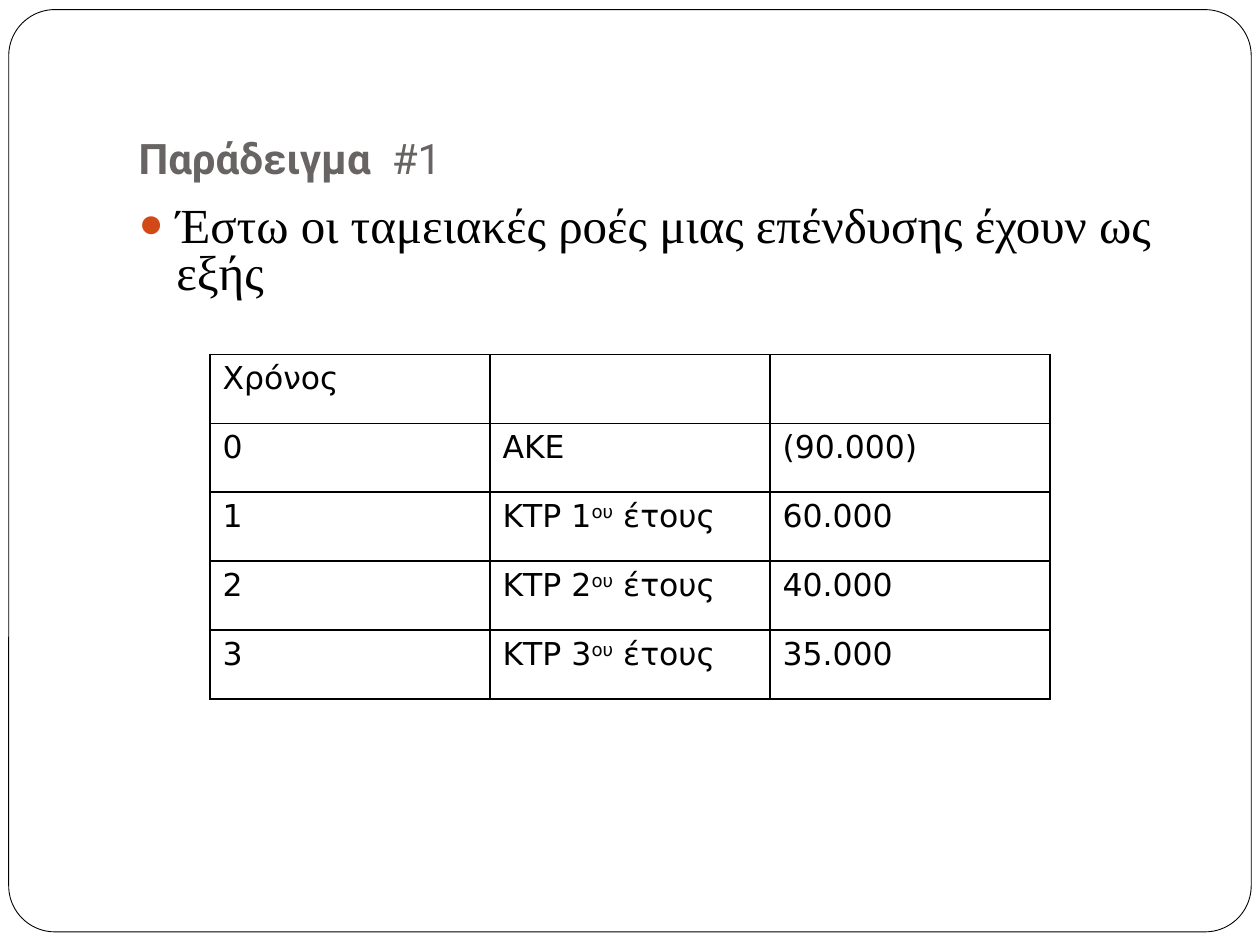
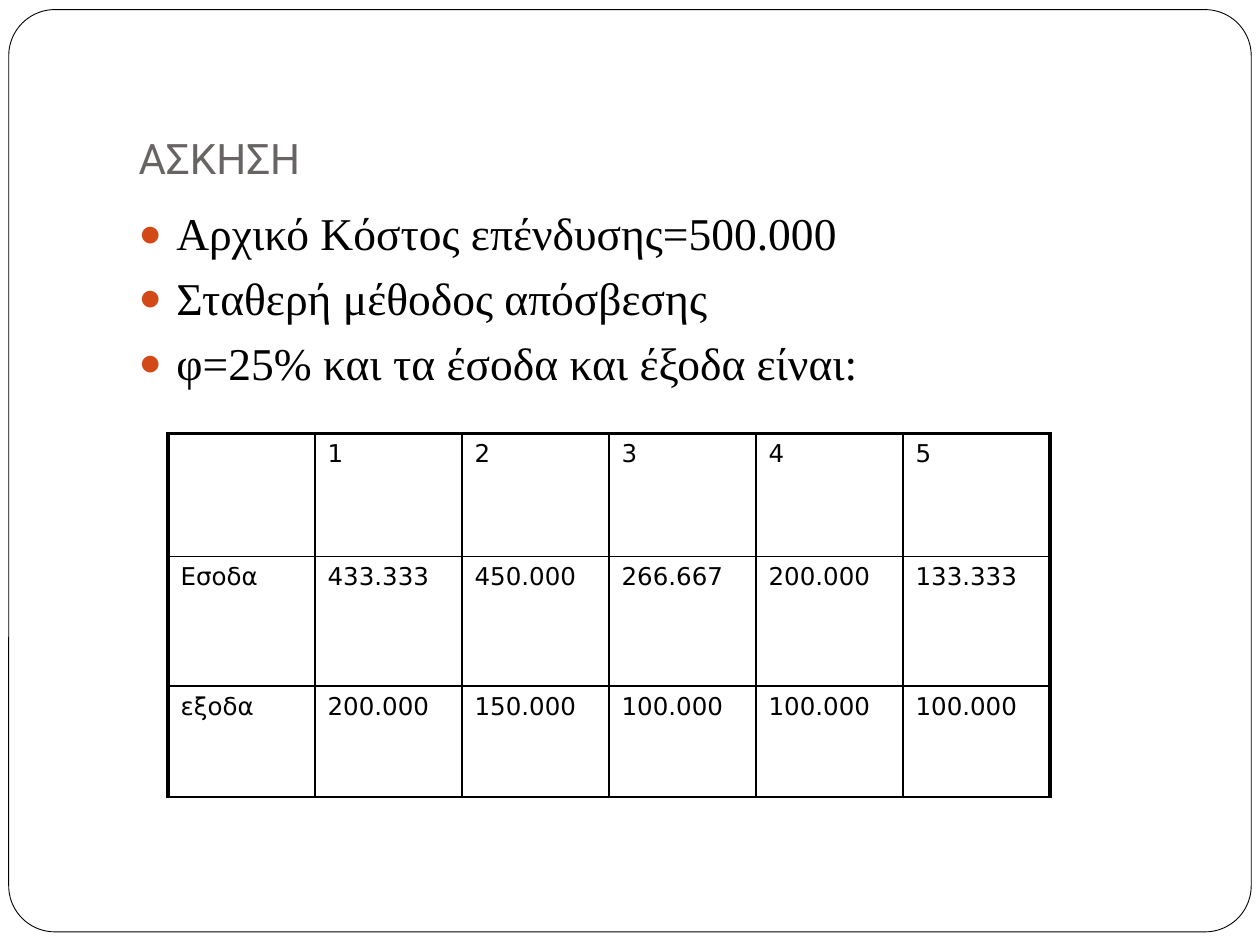
from lxml.etree import SubElement
from pptx import Presentation
from pptx.dml.color import RGBColor
from pptx.enum.shapes import MSO_SHAPE
from pptx.enum.text import MSO_ANCHOR, MSO_AUTO_SIZE, PP_ALIGN
from pptx.oxml.ns import qn
from pptx.util import Pt

COLORS = {
    "paper": "FFFFFF",
    "ink": "000000",
    "title": "696464",
    "bullet": "D34817",
}
TITLE_FONT, BODY_FONT, TABLE_FONT = "Roboto", "Times New Roman", "DejaVu Sans"
THIN, THICK = 1, 2.25


def rgb(name):
    return RGBColor.from_string(COLORS[name])


def add_text(paragraph, text, font=BODY_FONT, size=18, color="ink", bold=False, raised=False):
    run = paragraph.add_run()
    run.text = text
    run.font.name = font
    run.font.size = Pt(size)
    run.font.bold = bold
    run.font.color.rgb = rgb(color)
    if raised:
        run._r.get_or_add_rPr().set("baseline", "30000")


class Deck:
    """Holds the shared style and the slide being built."""

    def __init__(self):
        self.presentation = Presentation()
        self.presentation.slide_width = Pt(720)
        self.presentation.slide_height = Pt(540)
        self.slide = None

    def new_slide(self):
        self.slide = self.presentation.slides.add_slide(self.presentation.slide_layouts[1])
        self.slide.background.fill.solid()
        self.slide.background.fill.fore_color.rgb = rgb("paper")
        self.frame()

    def frame(self):
        shape = self.slide.shapes.add_shape(
            MSO_SHAPE.ROUNDED_RECTANGLE, Pt(5), Pt(5.5), Pt(710), Pt(527))
        shape.adjustments[0] = 0.05
        shape.shadow.inherit = False
        shape.fill.solid()
        shape.fill.fore_color.rgb = rgb("paper")
        shape.line.color.rgb = rgb("ink")
        shape.line.width = Pt(0.5)
        # Send behind the placeholders
        self.slide.shapes._spTree.insert(2, shape._element)

    def place(self, shape, top, height, anchor):
        shape.left, shape.top = Pt(72), Pt(top)
        shape.width, shape.height = Pt(612), Pt(height)
        text_frame = shape.text_frame
        text_frame.word_wrap = True
        text_frame.auto_size = MSO_AUTO_SIZE.NONE
        text_frame.vertical_anchor = anchor
        return text_frame

    def title(self, *parts):
        text_frame = self.place(self.slide.shapes.title, 21.6, 90, MSO_ANCHOR.BOTTOM)
        text_frame.margin_bottom = Pt(7.2)
        paragraph = text_frame.paragraphs[0]
        paragraph.alignment = PP_ALIGN.LEFT
        for text, bold in parts:
            add_text(paragraph, text, font=TITLE_FONT, size=24, color="title", bold=bold)

    def bullets(self, items, size, line_spacing=1.0):
        text_frame = self.place(self.slide.placeholders[1], 113.75, 360, MSO_ANCHOR.TOP)
        for index, item in enumerate(items):
            paragraph = text_frame.add_paragraph() if index else text_frame.paragraphs[0]
            paragraph.line_spacing = line_spacing
            paragraph.space_before = Pt(5.8)
            add_text(paragraph, item, size=size)
            self.bullet(paragraph)

    def bullet(self, paragraph):
        properties = paragraph._p.get_or_add_pPr()
        properties.set("marL", str(Pt(21.6)))
        properties.set("indent", str(-Pt(21.6)))
        color = SubElement(properties, qn("a:buClr"))
        SubElement(color, qn("a:srgbClr"), val=COLORS["bullet"])
        SubElement(properties, qn("a:buSzPct"), val="85000")
        SubElement(properties, qn("a:buChar"), char="●")

    def table(self, rows, left, top, column_width, row_heights, size,
              space_before=0, outer=THIN):
        """Draw a grid; outer is the border width at the left, right and top edges."""
        columns = len(rows[0])
        table = self.slide.shapes.add_table(
            len(rows), columns, Pt(left), Pt(top),
            Pt(column_width * columns), Pt(sum(row_heights))).table
        table.first_row = table.horz_banding = False
        for column in table.columns:
            column.width = Pt(column_width)
        for row_index, (values, height) in enumerate(zip(rows, row_heights)):
            table.rows[row_index].height = Pt(height)
            for column_index, value in enumerate(values):
                cell = table.cell(row_index, column_index)
                cell.fill.background()
                self.borders(cell, {
                    "L": THIN if column_index else outer,
                    "R": outer if column_index == columns - 1 else THIN,
                    "T": THIN if row_index else outer,
                    "B": THIN,
                })
                paragraph = cell.text_frame.paragraphs[0]
                paragraph.space_before = Pt(space_before)
                # Every second part of a tuple is superscript
                parts = value if isinstance(value, tuple) else (value,)
                for part_index, part in enumerate(parts):
                    if part:
                        add_text(paragraph, part, font=TABLE_FONT, size=size,
                                 raised=part_index % 2 == 1)

    def borders(self, cell, widths):
        properties = cell._tc.get_or_add_tcPr()
        for position, (side, width) in enumerate(widths.items()):
            line = SubElement(properties, qn(f"a:ln{side}"), w=str(Pt(width)))
            fill = SubElement(line, qn("a:solidFill"))
            SubElement(fill, qn("a:srgbClr"), val=COLORS["ink"])
            properties.insert(position, line)


def main():
    deck = Deck()

    # Example: cash flows of an investment
    deck.new_slide()
    deck.title(("Παράδειγμα ", True), (" #1", False))
    deck.bullets(["Έστω οι ταμειακές ροές μιας επένδυσης έχουν ως εξής"],
                 size=28, line_spacing=0.8)
    inflows = ["60.000", "40.000", "35.000"]
    cash_flows = [["Χρόνος", "", ""], ["0", "ΑΚΕ", "(90.000)"]]
    cash_flows += [[str(year), (f"ΚΤΡ {year}", "ου", " έτους"), inflow]
                   for year, inflow in enumerate(inflows, 1)]
    deck.table(cash_flows, left=120, top=202.5, column_width=160,
               row_heights=[39.4] * 5, size=18)

    # Exercise: yearly income and expenses
    deck.new_slide()
    deck.title(("ΑΣΚΗΣΗ", False))
    deck.bullets(["Αρχικό Κόστος επένδυσης=500.000",
                  "Σταθερή μέθοδος απόσβεσης",
                  "φ=25% και τα έσοδα και έξοδα είναι:"], size=26)
    income_and_expenses = [
        ["", "1", "2", "3", "4", "5"],
        ["Εσοδα", "433.333", "450.000", "266.667", "200.000", "133.333"],
        ["εξοδα", "200.000", "150.000", "100.000", "100.000", "100.000"],
    ]
    deck.table(income_and_expenses, left=96, top=247.6, column_width=84,
               row_heights=[70.3, 74.2, 63.4], size=14, space_before=2.8, outer=THICK)

    deck.presentation.save("out.pptx")


if __name__ == "__main__":
    main()
